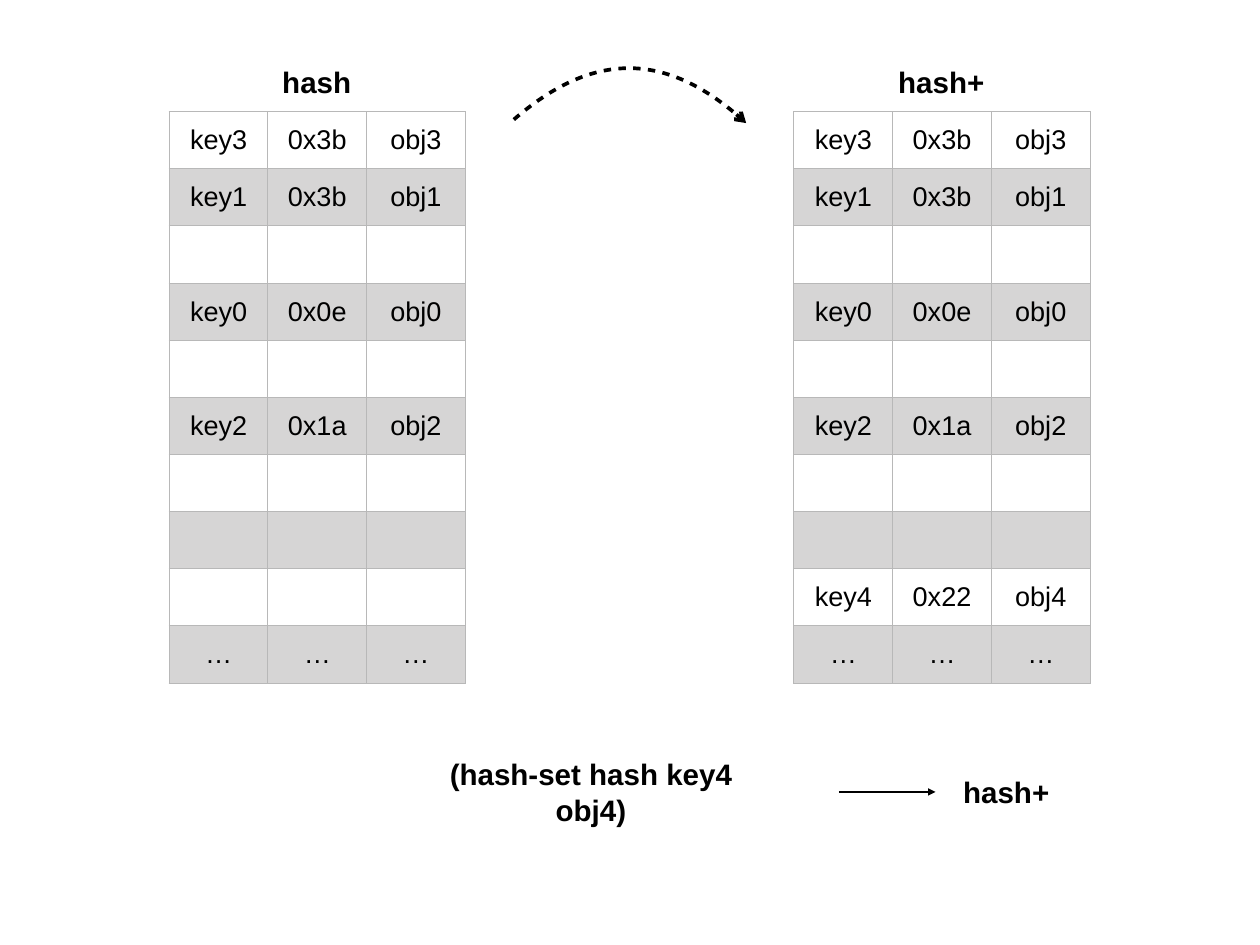
from dataclasses import dataclass

from lxml.etree import SubElement
from pptx import Presentation
from pptx.dml.color import RGBColor
from pptx.enum.shapes import MSO_CONNECTOR
from pptx.enum.text import MSO_ANCHOR, PP_ALIGN
from pptx.oxml.ns import qn
from pptx.util import Cm, Pt

COLORS = {"ink": "000000", "border": "B8B8B8", "odd": "FFFFFF", "even": "D6D5D5"}
COL_W, ROW_H, TABLE_TOP = 2.83, 1.64, 3.2
ROW_COUNT, COL_COUNT = 10, 3
INSET = Cm(0.14)
HASH_ROWS = {
    0: ("key3", "0x3b", "obj3"),
    1: ("key1", "0x3b", "obj1"),
    3: ("key0", "0x0e", "obj0"),
    5: ("key2", "0x1a", "obj2"),
    9: ("…", "…", "…"),
}


@dataclass
class HashTable:
    left: float
    rows: dict[int, tuple[str, str, str]]


@dataclass
class Label:
    text: str
    left: float
    top: float
    width: float
    height: float = 1.27
    wrap: bool = False


TABLES = [
    HashTable(4.85, HASH_ROWS),
    HashTable(22.76, {**HASH_ROWS, 8: ("key4", "0x22", "obj4")}),
]
LABELS = [
    Label("(hash-set hash key4 obj4)", 12.64, 21.6, 8.6, 2.2, wrap=True),
    Label("hash", 7.95, 1.7, 2.26),
    Label("hash+", 25.6, 1.7, 2.77),
    Label("hash+", 27.46, 22.07, 2.77),
]


def rgb(name: str) -> RGBColor:
    return RGBColor.from_string(COLORS[name])


def write(tf, text: str, *, size: float, bold: bool = False, color: str = "ink") -> None:
    p = tf.paragraphs[0]
    p.alignment = PP_ALIGN.CENTER
    r = p.add_run()
    r.text = text
    r.font.name, r.font.size, r.font.bold = "Arial", Pt(size), bold
    r.font.color.rgb = rgb(color)


def add_borders(cell) -> None:
    tcPr = cell._tc.get_or_add_tcPr()
    for side in ("lnL", "lnR", "lnT", "lnB"):
        ln = SubElement(tcPr, qn(f"a:{side}"), w=str(Pt(1)))
        fill = SubElement(ln, qn("a:solidFill"))
        SubElement(fill, qn("a:srgbClr"), val=COLORS["border"])


def add_hash_table(s, table: HashTable) -> None:
    tbl = s.shapes.add_table(
        ROW_COUNT, COL_COUNT, Cm(table.left), Cm(TABLE_TOP),
        Cm(COL_W * COL_COUNT), Cm(ROW_H * ROW_COUNT)).table
    tbl.first_row = tbl.horz_banding = False
    for i in range(ROW_COUNT):
        texts = table.rows.get(i, ("",) * COL_COUNT)
        for j, text in enumerate(texts):
            cell = tbl.cell(i, j)
            add_borders(cell)
            cell.fill.solid()
            cell.fill.fore_color.rgb = rgb("even" if i % 2 else "odd")
            cell.vertical_anchor = MSO_ANCHOR.MIDDLE
            cell.margin_left = cell.margin_right = INSET
            cell.margin_top = cell.margin_bottom = INSET
            if text:
                write(cell.text_frame, text, size=22)


def add_label(s, label: Label) -> None:
    tf = s.shapes.add_textbox(
        Cm(label.left), Cm(label.top), Cm(label.width), Cm(label.height)).text_frame
    tf.word_wrap = label.wrap
    tf.vertical_anchor = MSO_ANCHOR.MIDDLE
    tf.margin_left = tf.margin_right = tf.margin_top = tf.margin_bottom = INSET
    write(tf, label.text, size=24, bold=True)


def style_arrow(sp, width: float, head: str, dashed: bool = False) -> None:
    sp.line.color.rgb = rgb("ink")
    sp.line.width = Pt(width)
    ln = sp.line._get_or_add_ln()
    if dashed:
        dash = SubElement(ln, qn("a:custDash"))
        SubElement(dash, qn("a:ds"), d="200000", sp="200000")
    SubElement(ln, qn("a:tailEnd"), type=head)


def add_curved_arrow(s, points: list[tuple[float, float]]) -> None:
    """Draw a cubic curve through start, two control points and end."""
    start, *controls, end = [(Cm(x), Cm(y)) for x, y in points]
    apex = tuple(round((a + 3 * b + 3 * c + d) / 8)
                 for a, b, c, d in zip(start, *controls, end))
    builder = s.shapes.build_freeform(*start)
    builder.add_line_segments([apex, end], close=False)
    sp = builder.convert_to_shape()
    sp.shadow.inherit = False
    sp.fill.background()
    style_arrow(sp, 3, "arrow", dashed=True)
    # Replace the straight segments by one curve
    path = next(sp._element.iter(qn("a:path")))
    for segment in path.findall(qn("a:lnTo")):
        path.remove(segment)
    curve = SubElement(path, qn("a:cubicBezTo"))
    for x, y in (*controls, end):
        SubElement(curve, qn("a:pt"), x=str(x - sp.left), y=str(y - sp.top))


def add_straight_arrow(s, x1: float, x2: float, y: float) -> None:
    sp = s.shapes.add_connector(MSO_CONNECTOR.STRAIGHT, Cm(x1), Cm(y), Cm(x2), Cm(y))
    style_arrow(sp, 2, "triangle")
    SubElement(sp._element.spPr, qn("a:effectLst"))


def main() -> None:
    prs = Presentation()
    prs.slide_width, prs.slide_height = Cm(36.12), Cm(27.1)
    s = prs.slides.add_slide(prs.slide_layouts[6])

    # Hash before and after the update
    for table in TABLES:
        add_hash_table(s, table)
    add_curved_arrow(s, [(14.73, 3.43), (16.99, 1.47), (19.2, 1.5), (21.39, 3.53)])

    # Headings and the expression with its result
    for label in LABELS:
        add_label(s, label)
    add_straight_arrow(s, 24.05, 26.82, 22.71)

    prs.save("out.pptx")


if __name__ == "__main__":
    main()
